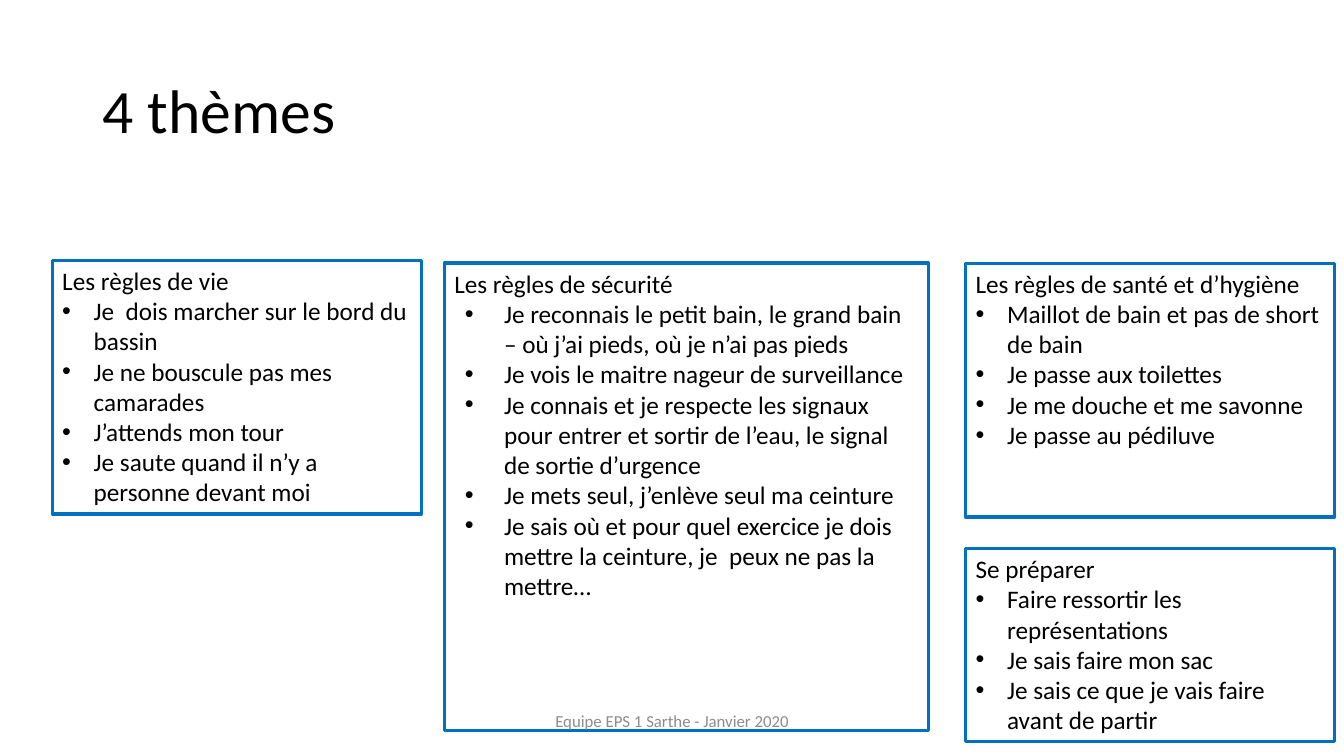
from pptx import Presentation
from pptx.dml.color import RGBColor
from pptx.enum.shapes import MSO_SHAPE
from pptx.enum.text import MSO_ANCHOR, PP_ALIGN
from pptx.oxml.ns import qn
from pptx.util import Pt
from lxml.etree import SubElement

FONT = "Calibri"
BLACK, BLUE, GREY = "000000", "0070C0", "8C8C8C"

LIFE_RULES = [
    "Je  dois marcher sur le bord du bassin",
    "Je ne bouscule pas mes camarades",
    "J’attends mon tour",
    "Je saute quand il n’y a personne devant moi",
]
SAFETY_RULES = [
    "Je reconnais le petit bain, le grand bain – où j’ai pieds, où je n’ai pas pieds",
    "Je vois le maitre nageur de surveillance",
    "Je connais et je respecte les signaux pour entrer et sortir de l’eau, "
    "le signal de sortie d’urgence",
    "Je mets seul, j’enlève seul ma ceinture",
    "Je sais où et pour quel exercice je dois mettre la ceinture, "
    "je  peux ne pas la mettre…",
]
HEALTH_RULES = [
    "Maillot de bain et pas de short de bain",
    "Je passe aux toilettes",
    "Je me douche et me savonne",
    "Je passe au pédiluve",
]
PREPARATION = [
    "Faire ressortir les représentations",
    "Je sais faire mon sac",
    "Je sais ce que je vais faire avant de partir",
]


def colour(code):
    """Return the colour for a hex string."""
    return RGBColor.from_string(code)


def add_span(para, text, size, code=BLACK):
    """Add one formatted run to a paragraph."""
    span = para.add_run()
    span.text = text
    span.font.name = FONT
    span.font.size = Pt(size)
    span.font.color.rgb = colour(code)


def add_bullet(para, margin, hang):
    """Give a paragraph a round bullet with a hanging indent."""
    properties = para._p.get_or_add_pPr()
    properties.set("marL", str(Pt(margin)))
    properties.set("indent", str(-Pt(hang)))
    SubElement(properties, qn("a:buFont")).set("typeface", "Arial")
    SubElement(properties, qn("a:buChar")).set("char", "•")


def place(shape, box):
    """Move a shape to a left, top, width, height box in points."""
    shape.left, shape.top, shape.width, shape.height = map(Pt, box)


def add_title(page, box, text):
    """Fill and place the title placeholder."""
    title = page.shapes.title
    place(title, box)
    frame = title.text_frame
    frame.word_wrap = True
    frame.vertical_anchor = MSO_ANCHOR.MIDDLE
    para = frame.paragraphs[0]
    para.alignment = PP_ALIGN.LEFT
    para.line_spacing = 0.9
    add_span(para, text, 44)


def add_theme(page, box, heading, rules, level=0, margin=22.5, hang=22.5):
    """Draw a framed theme with its heading and bulleted rules."""
    card = page.shapes.add_shape(MSO_SHAPE.RECTANGLE, *map(Pt, box))
    card.shadow.inherit = False
    card.fill.background()
    card.line.color.rgb = colour(BLUE)
    card.line.width = Pt(2.25)
    frame = card.text_frame
    frame.word_wrap = True
    frame.vertical_anchor = MSO_ANCHOR.TOP
    para = frame.paragraphs[0]
    para.alignment = PP_ALIGN.LEFT
    add_span(para, heading, 18)
    for rule in rules:
        para = frame.add_paragraph()
        para.alignment = PP_ALIGN.LEFT
        para.level = level
        add_bullet(para, margin, hang)
        add_span(para, rule, 18)


def add_footer(page, box, text):
    """Write the centred footer line."""
    frame = page.shapes.add_textbox(*map(Pt, box)).text_frame
    frame.word_wrap = True
    frame.vertical_anchor = MSO_ANCHOR.MIDDLE
    para = frame.paragraphs[0]
    para.alignment = PP_ALIGN.CENTER
    add_span(para, text, 12, GREY)


def add_themes_page(deck):
    """Build the page that shows the four themes."""
    page = deck.slides.add_slide(deck.slide_layouts[5])
    top, right, width, height = 187.9, 689.8, 263.5, 181.4
    add_title(page, (66.2, 28.8, 828, 104.4), "4 thèmes")
    add_theme(page, (37.4, 185.8, width, height), "Les règles de vie", LIFE_RULES)
    add_theme(page, (right, 391.7, width, 138.2), "Se préparer", PREPARATION)
    add_theme(page, (right, top, width, height),
              "Les règles de santé et d’hygiène", HEALTH_RULES)
    add_theme(page, (317.5, top, 345.6, 334.1), "Les règles de sécurité",
              SAFETY_RULES, level=1, margin=35.5, hang=28)
    add_footer(page, (318.2, 500.4, 324, 28.8), "Equipe EPS 1 Sarthe - Janvier 2020")


def main():
    """Create and save the deck."""
    deck = Presentation()
    deck.slide_width, deck.slide_height = Pt(960), Pt(540)
    add_themes_page(deck)
    deck.save("out.pptx")


if __name__ == "__main__":
    main()
